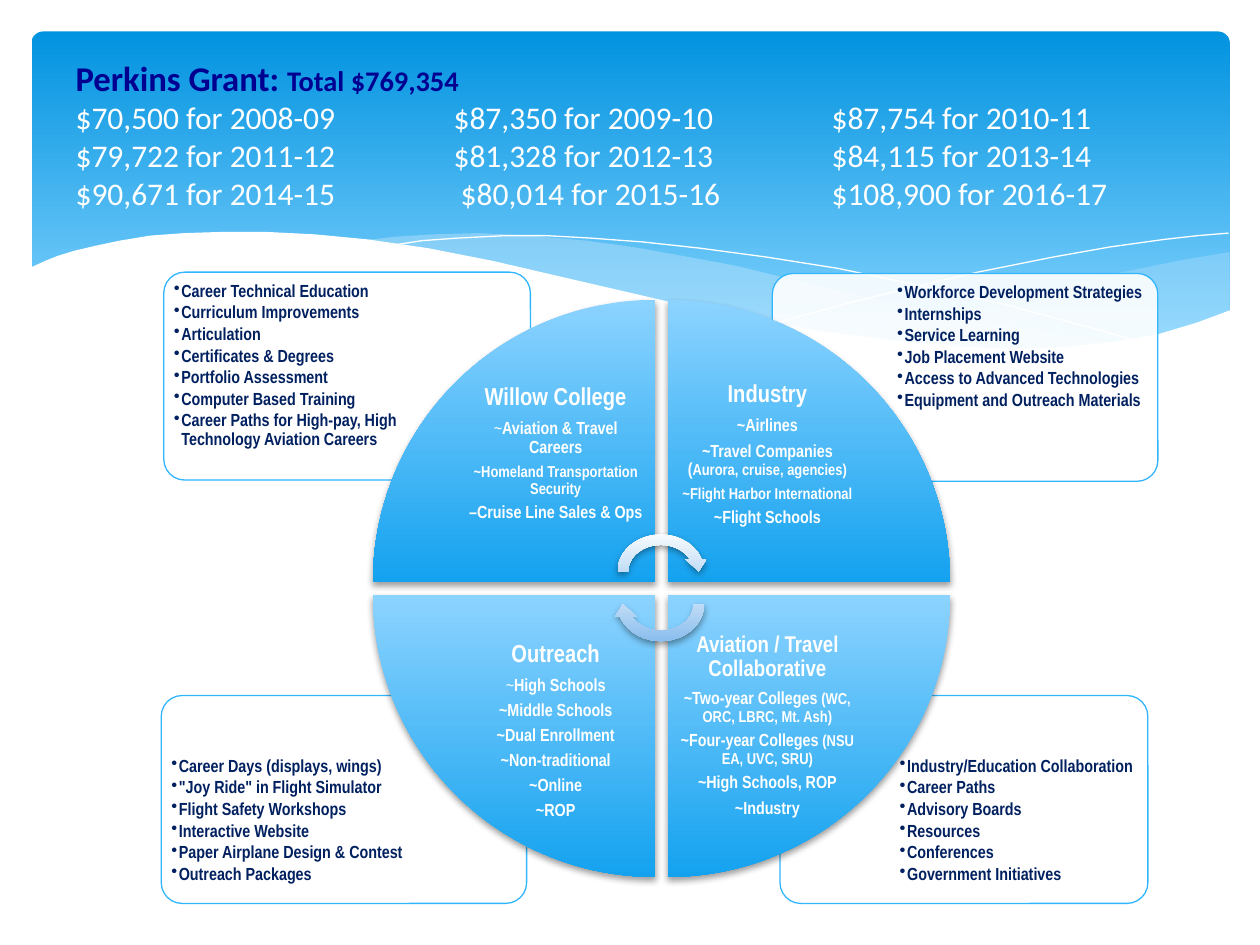
import pptx
import pptx.util
import pptx.dml.color
import pptx.enum.shapes
import pptx.enum.text
import pptx.oxml
import pptx.oxml.ns

RGB = pptx.dml.color.RGBColor
SHAPE = pptx.enum.shapes.MSO_SHAPE
ALIGN = pptx.enum.text.PP_ALIGN
ANCHOR = pptx.enum.text.MSO_ANCHOR
Pt = pptx.util.Pt
qn = pptx.oxml.ns.qn
NS = pptx.oxml.ns.nsdecls("a")

WHITE = RGB(0xFF, 0xFF, 0xFF)
WAVE = RGB(0xC6, 0xE7, 0xFC)
SKY_TOP, SKY_END = RGB(0x02, 0x93, 0xE0), RGB(0x83, 0xD3, 0xFE)
WEDGE_TOP, WEDGE_END = RGB(0x8C, 0xD3, 0xFF), RGB(0x14, 0xA2, 0xEF)
ARROW_END = RGB(0x82, 0xB9, 0xEC)
BORDER = RGB(0x31, 0xB6, 0xFD)
HEADING = RGB(0x00, 0x00, 0x90)
NAVY = RGB(0x00, 0x20, 0x60)
NARROW = "Arial Narrow"
PX = 9144

TITLE = [
    [("Perkins Grant: ", 19.8, True, HEADING), ("Total $769,354", 16.2, True, HEADING)],
    [("$70,500 for 2008-09\t$87,350 for 2009-10\t$87,754 for 2010-11", 18, False, WHITE)],
    [("$79,722 for 2011-12\t$81,328 for 2012-13\t$84,115 for 2013-14", 18, False, WHITE)],
    [("$90,671 for 2014-15\t $80,014 for 2015-16\t$108,900 for 2016-17", 18, False, WHITE)],
]
TITLE_TABS = (300, 600)

WAVES = [
    (WAVE, 29, [(976, 200), (935, 207), (891, 216), (861, 223), (805, 237), (753, 248), (706, 257),
                (661, 265), (705, 271), (745, 275), (781, 277), (814, 278), (844, 277), (872, 274),
                (897, 270), (921, 265), (942, 259), (963, 252), (976, 247)]),
    (WAVE, 40, [(893, 273), (837, 265), (775, 254), (706, 240), (629, 222), (584, 211), (541, 203),
                (502, 196), (465, 191), (420, 187), (380, 185), (344, 186), (313, 188), (286, 191),
                (323, 196), (362, 203), (404, 211), (449, 222), (530, 240), (601, 255), (665, 266),
                (722, 274), (773, 277), (818, 278), (857, 277), (893, 273)]),
    (None, 0, [(309, 195), (335, 191), (363, 189), (401, 187), (433, 187), (469, 189), (510, 192),
               (556, 197), (608, 204), (665, 213), (727, 226), (795, 241), (869, 261), (907, 272)]),
    (None, 0, [(613, 257), (672, 241), (720, 229), (776, 216), (836, 204), (881, 196), (924, 190),
               (951, 187), (975, 185)]),
    (WHITE, 100, [(977, 246), (950, 256), (920, 265), (887, 271), (850, 275), (809, 277), (761, 275),
                  (708, 270), (648, 262), (603, 254), (555, 245), (503, 233), (447, 220), (391, 207),
                  (340, 197), (292, 190), (250, 186), (211, 184), (177, 184), (146, 185), (119, 187),
                  (95, 191), (76, 195), (59, 199), (46, 203), (36, 207), (23, 213), (23, 329), (977, 329)]),
]

BOXES = [
    ((619, 552, 292, 165), (710, 597, 197, 117),
     ["Industry/Education Collaboration", "Career Paths", "Advisory Boards", "Resources",
      "Conferences", "Government Initiatives"]),
    ((128, 552, 290, 165), (132, 597, 196, 117),
     ["Career Days (displays, wings)", '"Joy Ride" in Flight Simulator', "Flight Safety Workshops",
      "Interactive Website", "Paper Airplane Design & Contest", "Outreach Packages"]),
    ((613, 217, 306, 165), (708, 221, 207, 117),
     ["Workforce Development Strategies", "Internships", "Service Learning", "Job Placement Website",
      "Access to Advanced Technologies", "Equipment and Outreach Materials"]),
    ((130, 216, 291, 165), (134, 220, 196, 117),
     ["Career Technical Education", "Curriculum Improvements", "Articulation", "Certificates & Degrees",
      "Portfolio Assessment", "Computer Based Training",
      "Career Paths for High-pay, High Technology Aviation Careers"]),
]

WEDGES = [
    (0, 0, 0, 305, [
        [("Willow College", 14)],
        [("~", 10, False), ("Aviation & Travel Careers", 10)],
        [("~Homeland Transportation Security", 9)],
        [("–Cruise Line Sales & Ops", 10)]]),
    (1, 0, 90, 303, [
        [("Industry", 14)],
        [("~Airlines", 10)],
        [("~Travel Companies (", 10), ("Aurora, cruise, agencies)", 9)],
        [("~Flight Harbor International", 9)],
        [("~Flight Schools", 10)]]),
    (1, 1, 180, 502, [
        [("Aviation / Travel Collaborative", 13)],
        [("~Two-year Colleges ", 10), ("(WC, ORC, LBRC, Mt. Ash)", 9)],
        [("~Four-year Colleges ", 10), ("(NSU EA, UVC, SRU)", 9)],
        [("~High Schools, ROP", 10)],
        [("~Industry", 10)]]),
    (0, 1, 270, 509, [
        [("Outreach", 14)],
        [("~", 10, False), ("High Schools", 10)],
        [("~Middle Schools", 10)],
        [("~Dual Enrollment", 10)],
        [("~Non-traditional", 10)],
        [("~Online", 10)],
        [("~ROP", 10)]]),
]
WEDGE_X, WEDGE_Y, WEDGE_SIZE, WEDGE_STEP = 296, 238, 224, 234
LABEL_X, LABEL_W = (362, 530), 158
ARROWS = [(420, 0), (446, 180)]


def emu(*lengths):
    return [v * PX for v in lengths]


def set_all(obj, values):
    for name, value in values.items():
        setattr(obj, name, value)


def solid(sp, color, alpha=100):
    sp.fill.solid()
    sp.fill.fore_color.rgb = color
    clr = sp._element.spPr.find(qn("a:solidFill"))[0]
    clr.append(pptx.oxml.parse_xml(f'<a:alpha {NS} val="{alpha * 1000}"/>'))


def gradient(sp, first, last, end=1.0):
    sp.fill.gradient()
    sp.fill.gradient_angle = 270
    for stop, color, pos in zip(sp.fill.gradient_stops, (first, last), (0, end)):
        stop.color.rgb = color
        stop.position = pos
    sp._element.spPr.find(qn("a:gradFill")).set("rotWithShape", "0")
    sp.line.fill.background()


def add_shape(s, kind, box, rotation=0, adj=None):
    sp = s.shapes.add_shape(kind, *emu(*box))
    sp.shadow.inherit = False
    sp.rotation = rotation
    if adj is not None:
        sp.adjustments[0] = adj
    return sp


def drop_shadow(sp):
    sp._element.spPr.find(qn("a:effectLst")).append(pptx.oxml.parse_xml(
        f'<a:outerShdw {NS} blurRad="50800" dist="25400" dir="5400000" rotWithShape="0">'
        '<a:srgbClr val="000000"><a:alpha val="38000"/></a:srgbClr></a:outerShdw>'))


def add_run(p, text, size, bold, color, font):
    r = p.add_run()
    r.text = text
    set_all(r.font, {"size": Pt(size), "bold": bold, "name": font})
    r.font.color.rgb = color


def paragraphs(tf, items):
    for i, item in enumerate(items):
        yield (tf.add_paragraph() if i else tf.paragraphs[0]), item


def add_text(s, box, side, top):
    tf = s.shapes.add_textbox(*emu(*box)).text_frame
    set_all(tf, {"word_wrap": True, "margin_left": side * PX, "margin_right": side * PX,
                 "margin_top": top * PX, "margin_bottom": top * PX})
    return tf


def add_header(s):
    sky = add_shape(s, SHAPE.ROUNDED_RECTANGLE, (25, 25, 951, 270), adj=0.034)
    gradient(sky, SKY_TOP, SKY_END, 0.9)
    for color, alpha, points in WAVES:
        fb = s.shapes.build_freeform(*points[0], scale=PX)
        fb.add_line_segments(points[1:], close=color is not None)
        sp = fb.convert_to_shape()
        sp.shadow.inherit = False
        if color is None:
            sp.fill.background()
            sp.line.color.rgb = WHITE
            sp.line.width = 0
        else:
            solid(sp, color, alpha)
            sp.line.fill.background()


def add_title(s):
    title = s.shapes.title
    s.shapes._spTree.append(title._element)
    set_all(title, dict(zip(("left", "top", "width", "height"), emu(50, 38, 900, 137))))
    tf = title.text_frame
    set_all(tf, {"word_wrap": True, "auto_size": pptx.enum.text.MSO_AUTO_SIZE.NONE,
                 "vertical_anchor": ANCHOR.MIDDLE})
    tabs = "".join(f'<a:tab pos="{x * PX}" algn="l"/>' for x in TITLE_TABS)
    for p, runs in paragraphs(tf, TITLE):
        p.alignment = ALIGN.LEFT
        p._p.get_or_add_pPr().append(pptx.oxml.parse_xml(f"<a:tabLst {NS}>{tabs}</a:tabLst>"))
        for text, size, bold, color in runs:
            add_run(p, text, size, bold, color, "Calibri")


def add_box(s, box, text_box, items):
    sp = add_shape(s, SHAPE.ROUNDED_RECTANGLE, box, adj=0.1)
    solid(sp, WHITE, 90)
    sp.line.color.rgb = BORDER
    sp.line.width = Pt(0.75)
    for p, text in paragraphs(add_text(s, text_box, 4, 4), items):
        set_all(p, {"line_spacing": 0.9, "space_after": Pt(1.5)})
        pPr = p._p.get_or_add_pPr()
        pPr.set("marL", str(6 * PX))
        pPr.set("indent", str(-6 * PX))
        pPr.append(pptx.oxml.parse_xml(f'<a:buChar {NS} char="•"/>'))
        add_run(p, text, 10, True, NAVY, NARROW)


def add_wedge(s, col, row, rotation, top, items):
    x, y = WEDGE_X + col * WEDGE_STEP, WEDGE_Y + row * WEDGE_STEP
    sp = add_shape(s, SHAPE.PIE_WEDGE, (x, y, WEDGE_SIZE, WEDGE_SIZE), rotation)
    gradient(sp, WEDGE_TOP, WEDGE_END)
    drop_shadow(sp)
    tf = add_text(s, (LABEL_X[col], top, LABEL_W, 158), 10, 0)
    for p, runs in paragraphs(tf, items):
        set_all(p, {"alignment": ALIGN.CENTER, "line_spacing": 0.9,
                    "space_after": Pt(round(runs[0][1] * 0.35, 1))})
        for text, size, *bold in runs:
            add_run(p, text, size, not bold, WHITE, NARROW)


def main():
    prs = pptx.Presentation()
    prs.slide_width, prs.slide_height = emu(1000, 750)
    s = prs.slides.add_slide(prs.slide_layouts[5])
    add_header(s)
    add_title(s)
    for box in BOXES:
        add_box(s, *box)
    for wedge in WEDGES:
        add_wedge(s, *wedge)
    for y, rotation in ARROWS:
        sp = add_shape(s, SHAPE.CIRCULAR_ARROW, (486, y, 77, 67), rotation)
        gradient(sp, WHITE, ARROW_END)
        drop_shadow(sp)
    prs.save("out.pptx")


if __name__ == "__main__":
    main()
